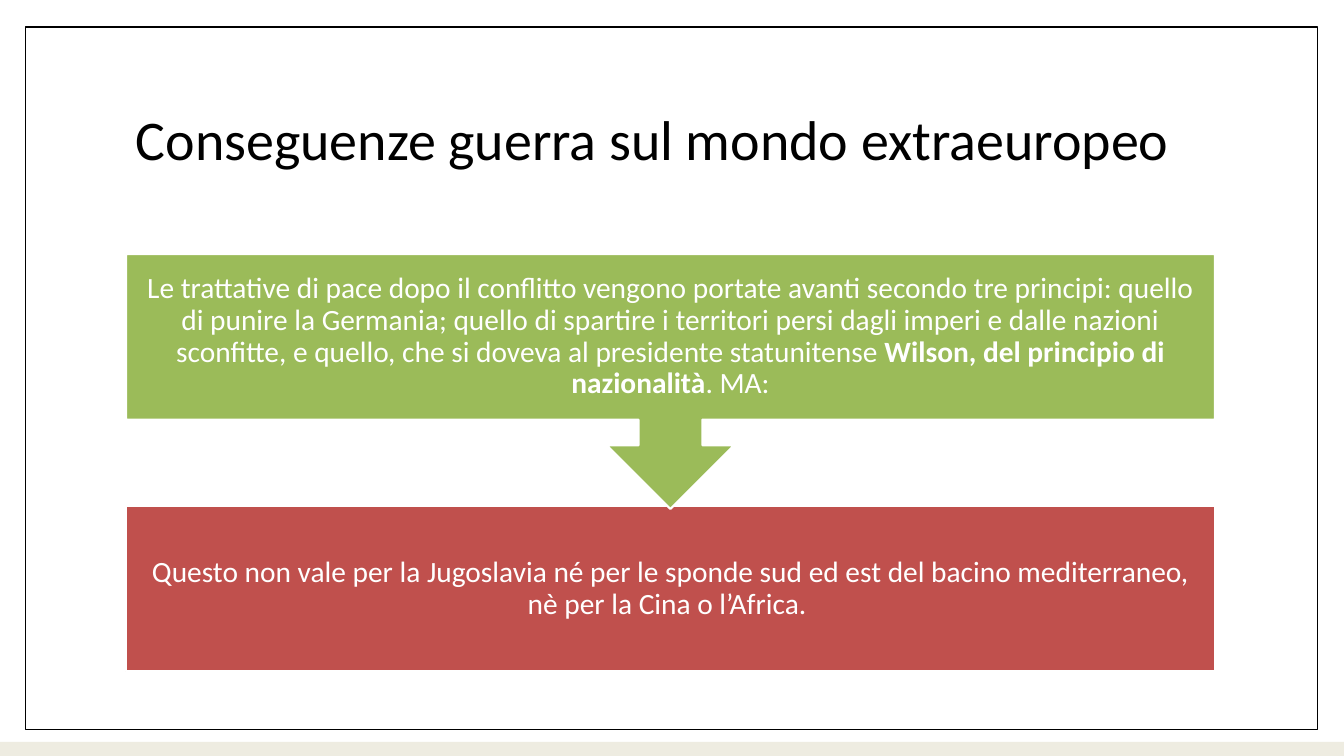
from dataclasses import dataclass

from pptx import Presentation
from pptx.dml.color import RGBColor
from pptx.enum.shapes import MSO_SHAPE
from pptx.enum.text import MSO_ANCHOR, PP_ALIGN
from pptx.util import Inches, Pt

RECT = MSO_SHAPE.RECTANGLE
CALLOUT = MSO_SHAPE.DOWN_ARROW_CALLOUT
MIDDLE = MSO_ANCHOR.MIDDLE
LEFT, CENTER = PP_ALIGN.LEFT, PP_ALIGN.CENTER

BLACK = RGBColor(0x00, 0x00, 0x00)
WHITE = RGBColor(0xFF, 0xFF, 0xFF)
BEIGE = RGBColor(0xEE, 0xEC, 0xE1)
GREEN = RGBColor(0x9B, 0xBB, 0x59)
RED = RGBColor(0xC0, 0x50, 0x4D)

FONT = "Calibri"
CONTENT_LEFT, CONTENT_WIDTH = 1.25, 10.8


@dataclass(frozen=True)
class Run:
    text: str
    bold: bool = False


@dataclass(frozen=True)
class Panel:
    kind: MSO_SHAPE
    left: float
    top: float
    width: float
    height: float
    fill: RGBColor
    line: RGBColor | None = None
    line_width: float = 0
    runs: tuple[Run, ...] = ()


PANELS = (
    Panel(RECT, 0, 7.36, 13.33, 0.14, BEIGE),
    Panel(RECT, 0.25, 0.27, 12.82, 6.97, WHITE, BLACK, 1),
    Panel(RECT, CONTENT_LEFT, 5.02, CONTENT_WIDTH, 1.64, RED, WHITE, 1.5, (
        Run("Questo non vale per la Jugoslavia né per le sponde sud ed est del "
            "bacino mediterraneo, nè per la Cina o l’Africa. "),
    )),
    Panel(CALLOUT, CONTENT_LEFT, 2.52, CONTENT_WIDTH, 2.53, GREEN, WHITE, 1.5, (
        Run("Le trattative di pace dopo il conflitto vengono portate avanti "
            "secondo tre principi: quello di punire la Germania; quello di "
            "spartire i territori persi dagli imperi e dalle nazioni sconfitte, "
            "e quello, che si doveva al presidente statunitense "),
        Run("Wilson, del principio di nazionalità", True),
        Run(". MA:"),
    )),
)


def write_text(sp, runs: tuple[Run, ...], size: float, color: RGBColor,
               align: PP_ALIGN, inset: float) -> None:
    tf = sp.text_frame
    tf.word_wrap = True
    tf.vertical_anchor = MIDDLE
    tf.margin_left = tf.margin_right = Inches(inset)
    tf.margin_top = tf.margin_bottom = Inches(inset)
    p = tf.paragraphs[0]
    p.alignment = align
    p.line_spacing = 0.9
    for run in runs:
        r = p.add_run()
        r.text = run.text
        r.font.name = FONT
        r.font.size = Pt(size)
        r.font.bold = run.bold
        r.font.color.rgb = color


def draw_panel(s, panel: Panel) -> None:
    sp = s.shapes.add_shape(panel.kind, Inches(panel.left), Inches(panel.top),
                            Inches(panel.width), Inches(panel.height))
    sp.shadow.inherit = False
    sp.fill.solid()
    sp.fill.fore_color.rgb = panel.fill
    if panel.line is None:
        sp.line.fill.background()
    else:
        sp.line.color.rgb = panel.line
        sp.line.width = Pt(panel.line_width)
    if panel.runs:
        write_text(sp, panel.runs, 21, WHITE, CENTER, 0.16)


def draw_title(s, text: str) -> None:
    sp = s.shapes.add_textbox(Inches(CONTENT_LEFT), Inches(0.67),
                              Inches(CONTENT_WIDTH), Inches(1.48))
    write_text(sp, (Run(text),), 40, BLACK, LEFT, 0.1)


def main() -> None:
    prs = Presentation()
    prs.slide_width = Inches(13.33)
    prs.slide_height = Inches(7.5)
    s = prs.slides.add_slide(prs.slide_layouts[6])
    for panel in PANELS:
        draw_panel(s, panel)
    draw_title(s, "Conseguenze guerra sul mondo extraeuropeo")
    prs.save("out.pptx")


if __name__ == "__main__":
    main()
